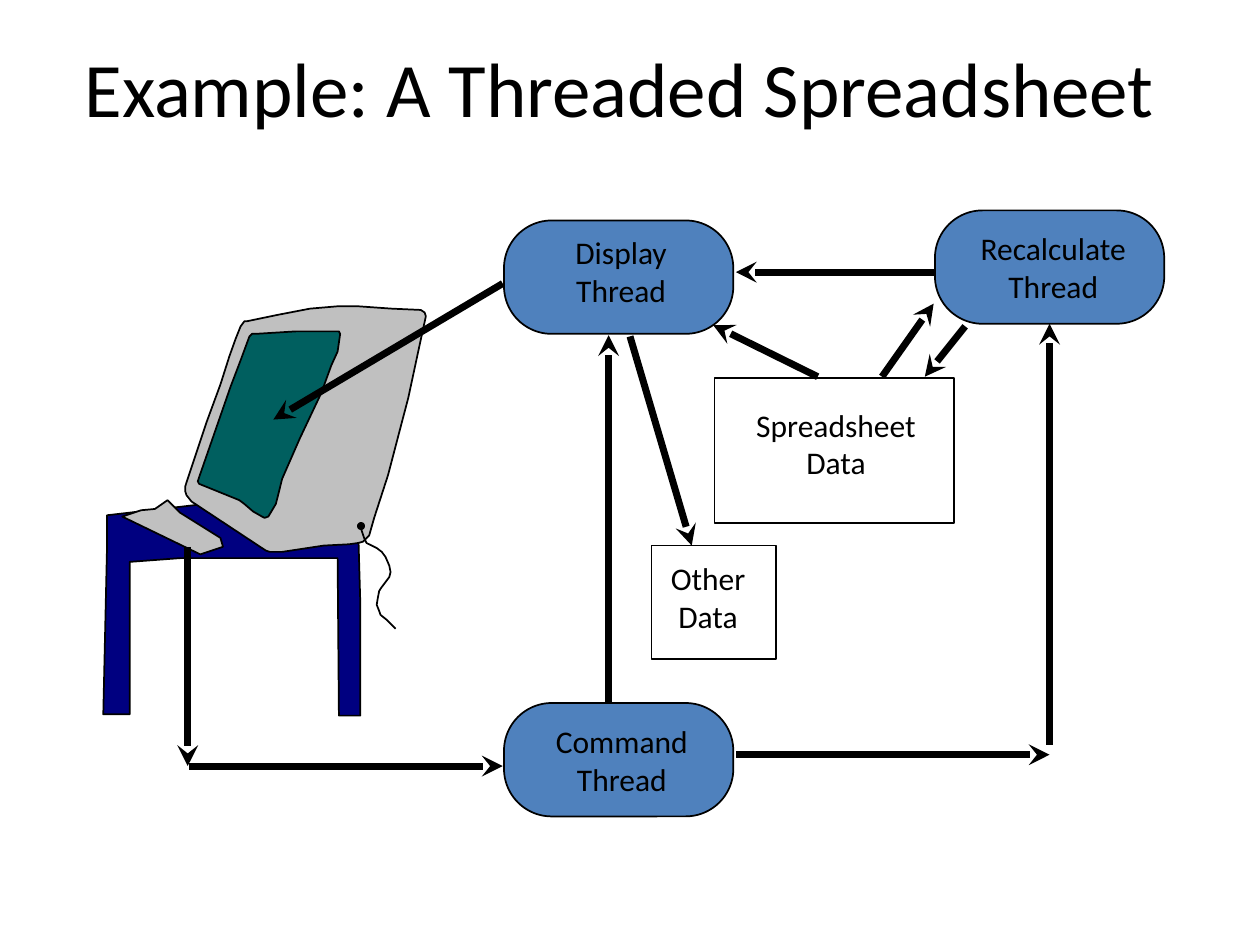
"""Build a slide showing the threads and data of a threaded spreadsheet."""
from lxml import etree
from pptx import Presentation
from pptx.dml.color import RGBColor
from pptx.enum.shapes import MSO_CONNECTOR, MSO_SHAPE
from pptx.enum.text import MSO_ANCHOR, PP_ALIGN
from pptx.oxml.ns import qn
from pptx.util import Inches, Pt

STRAIGHT = MSO_CONNECTOR.STRAIGHT
ROUNDED, RECTANGLE, OVAL = MSO_SHAPE.ROUNDED_RECTANGLE, MSO_SHAPE.RECTANGLE, MSO_SHAPE.OVAL
TOP, MIDDLE = MSO_ANCHOR.TOP, MSO_ANCHOR.MIDDLE
CENTER = PP_ALIGN.CENTER
BLACK, WHITE, BLUE = "000000", "FFFFFF", "4F81BD"
NAVY, GRAY, TEAL = "000080", "C0C0C0", "005F5F"
BOTTOM_SIDE = 2
rgb = RGBColor.from_string

prs = Presentation()
prs.slide_width, prs.slide_height = Inches(10), Inches(7.5)
slide = prs.slides.add_slide(prs.slide_layouts[6])


def write_text(text, left, top, width, height, size=18, anchor=TOP):
    frame = slide.shapes.add_textbox(
        Inches(left), Inches(top), Inches(width), Inches(height)).text_frame
    frame.word_wrap = True
    frame.vertical_anchor = anchor
    frame.text = text
    for paragraph in frame.paragraphs:
        paragraph.alignment = CENTER
        paragraph.font.size = Pt(size)
        paragraph.font.name = "Calibri"
        paragraph.font.color.rgb = rgb(BLACK)


def paint(shape, fill):
    shape.shadow.inherit = False
    if fill:
        shape.fill.solid()
        shape.fill.fore_color.rgb = rgb(fill)
    else:
        shape.fill.background()
    shape.line.color.rgb = rgb(BLACK)
    shape.line.width = Pt(1)


write_text("Example: A Threaded Spreadsheet", 0.42, 0.06, 9, 1.25, size=44, anchor=MIDDLE)

# Outline points are in hundredths of an inch.
desk = [(286, 568), (286, 480), (284, 410), (180, 398), (85, 409), (85, 433), (82, 567),
        (103, 567), (103, 446), (143, 443), (268, 443), (269, 568)]
keyboard = [(112, 405), (123, 404), (133, 397), (143, 407), (175, 427), (177, 434),
            (159, 440), (97, 410)]
monitor = [(182, 283), (187, 269), (191, 259), (194, 255), (196, 255), (220, 250),
           (246, 245), (269, 243), (283, 243), (311, 245), (334, 246), (337, 248),
           (338, 251), (333, 274), (324, 316), (319, 335), (308, 377), (297, 411),
           (293, 425), (291, 427), (288, 430), (284, 431), (277, 432), (257, 433),
           (224, 438), (214, 438), (211, 437), (152, 398), (148, 393), (147, 390),
           (147, 386), (148, 383), (164, 335), (175, 305)]
screen = [(183, 307), (191, 286), (198, 267), (200, 265), (203, 265), (235, 263),
          (269, 263), (270, 265), (268, 279), (263, 290), (255, 312), (238, 348),
          (224, 380), (221, 392), (219, 400), (216, 405), (213, 410), (210, 411),
          (208, 410), (201, 406), (194, 400), (190, 397), (158, 384), (157, 382),
          (158, 379)]
cable = [(286, 418), (289, 427), (291, 431), (295, 433), (299, 435), (303, 438),
         (306, 442), (309, 449), (310, 454), (309, 458), (306, 462), (303, 466),
         (301, 469), (300, 474), (299, 480), (301, 485), (302, 488), (307, 492),
         (314, 499)]

workstation = slide.shapes.add_group_shape()
for outline, fill in ((desk, NAVY), (keyboard, GRAY), (monitor, GRAY),
                      (screen, TEAL), (cable, None)):
    builder = workstation.shapes.build_freeform(*outline[0], scale=Inches(0.01))
    builder.add_line_segments(outline[1:], close=fill is not None)
    paint(builder.convert_to_shape(), fill)
plug = workstation.shapes.add_shape(
    OVAL, Inches(2.84), Inches(4.15), Inches(0.05), Inches(0.05))
paint(plug, BLACK)

nodes = [
    ("Command\nThread", ROUNDED, (4, 5.58, 1.82, 0.9), (4.14, 5.68, 1.59, 0.9)),
    ("Spreadsheet\nData", RECTANGLE, (5.67, 3, 1.9, 1.15), (5.73, 3.17, 1.81, 0.9)),
    ("Other\nData", RECTANGLE, (5.17, 4.33, 0.99, 0.9), (5.14, 4.39, 0.96, 0.9)),
    ("Display\nThread", ROUNDED, (4, 1.75, 1.82, 0.9), (4.31, 1.8, 1.24, 0.9)),
    ("Recalculate\nThread", ROUNDED, (7.42, 1.67, 1.82, 0.9), (7.48, 1.77, 1.76, 0.9)),
]
for label, outline, box, label_box in nodes:
    node = slide.shapes.add_shape(outline, *map(Inches, box))
    paint(node, BLUE if outline == ROUNDED else WHITE)
    if outline == ROUNDED:
        node.adjustments[0] = 0.42
    write_text(label, *label_box)
recalculate_thread = node

flows = [
    (1.49, 4.34, 1.49, 6.08),
    (1.5, 6.08, 3.99, 6.08),
    (5.84, 5.99, 8.33, 5.99),
    (4.83, 5.57, 4.83, 2.66),
    (5, 2.67, 5.49, 4.33),
    (6.49, 2.99, 5.66, 2.58),
    (7.66, 2.59, 7.34, 2.99),
    (7, 2.99, 7.41, 2.41),
    (7.41, 2.16, 5.84, 2.16),
    (3.99, 2.25, 2.17, 3.33),
    (8.33, 5.91, 8.33, 2.57),
]
for ends in flows:
    arrow = slide.shapes.add_connector(STRAIGHT, *map(Inches, ends))
    arrow.line.color.rgb = rgb(BLACK)
    arrow.line.width = Pt(4)
    etree.SubElement(arrow.line._get_or_add_ln(), qn("a:tailEnd"), type="stealth")
    etree.SubElement(arrow._element.spPr, qn("a:effectLst"))
arrow.end_connect(recalculate_thread, BOTTOM_SIDE)

prs.save("out.pptx")
